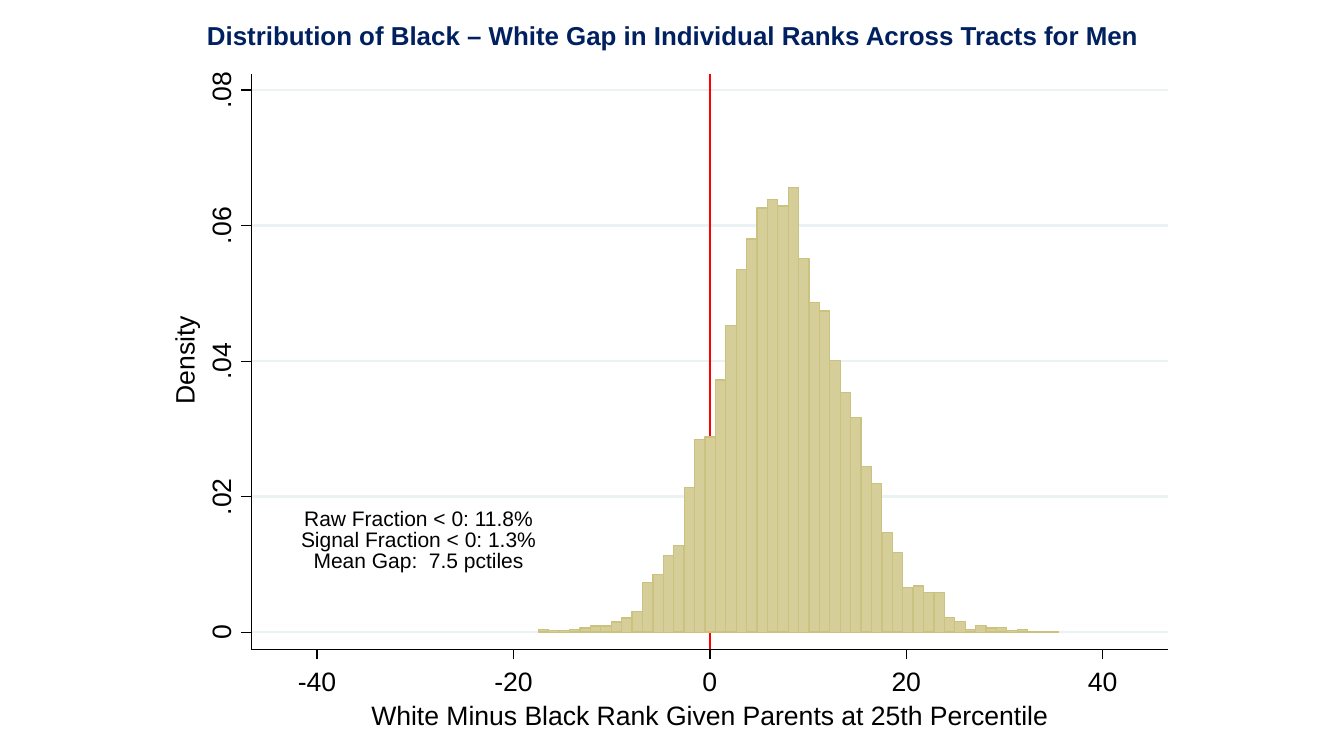
from lxml import etree
from pptx import Presentation
from pptx.dml.color import RGBColor
from pptx.enum.shapes import MSO_CONNECTOR, MSO_SHAPE
from pptx.enum.text import MSO_ANCHOR, MSO_AUTO_SIZE, PP_ALIGN
from pptx.oxml.ns import qn
from pptx.util import Cm, Pt

RECT = MSO_SHAPE.RECTANGLE
STRAIGHT = MSO_CONNECTOR.STRAIGHT
CENTER = PP_ALIGN.CENTER
MIDDLE = MSO_ANCHOR.MIDDLE
FIXED = MSO_AUTO_SIZE.NONE

FONT = "Arial"
COLORS = {
    "title": "002060",
    "text": "000000",
    "axis": "000000",
    "grid": "EAF2F3",
    "zero": "FF0000",
    "bar": "D5CE98",
    "edge": "CAC27E",
}

# Plot frame in cm
LEFT, RIGHT, TOP, BOTTOM = 6.33, 29.44, 1.86, 16.36
ORIGIN_X, ORIGIN_Y = 17.89, 15.93
TICK = 0.25
THIN, THICK = 0.88, 1.75

# Histogram: bin edges in ranks, densities in ten-thousandths
FIRST, BIN = -17.46, 1.06
DENSITY = [
    4, 3, 3, 4, 6, 9, 9, 15, 21, 30,
    73, 85, 113, 128, 213, 284, 288, 372, 452, 535,
    580, 626, 638, 629, 656, 552, 486, 474, 401, 354,
    317, 244, 219, 147, 117, 66, 68, 58, 59, 22,
    16, 4, 10, 6, 7, 3, 4, 1, 1, 1,
]
RANKS = range(-40, 41, 20)
LEVELS = {0: "0", 200: ".02", 400: ".04", 600: ".06", 800: ".08"}
NOTES = [
    "Raw Fraction < 0: 11.8%",
    "Signal Fraction < 0: 1.3%",
    "Mean Gap:  7.5 pctiles",
]


def map_x(rank):
    return ORIGIN_X + rank * 9.9 / 40


def map_y(level):
    return ORIGIN_Y - level * 13.66 / 800


def color(name):
    return RGBColor.from_string(COLORS[name])


def style(para, size, name, bold=False):
    para.alignment = CENTER
    for run in para.runs:
        font = run.font
        font.name, font.size, font.bold = FONT, Pt(size), bold
        font.color.rgb = color(name)


def add_line(slide, x1, y1, x2, y2, name, width):
    line = slide.shapes.add_connector(STRAIGHT, Cm(x1), Cm(y1), Cm(x2), Cm(y2))
    line.line.color.rgb = color(name)
    line.line.width = Pt(width)
    etree.SubElement(line._element.spPr, qn("a:effectLst"))


def add_bar(slide, index, level):
    left, top = map_x(FIRST + index * BIN), map_y(level)
    bar = slide.shapes.add_shape(
        RECT, Cm(left), Cm(top), Cm(map_x(BIN) - ORIGIN_X), Cm(ORIGIN_Y - top))
    bar.shadow.inherit = False
    bar.fill.solid()
    bar.fill.fore_color.rgb = color("bar")
    bar.line.color.rgb = color("edge")
    bar.line.width = Pt(THIN)


def add_label(slide, text, x, y, width, size=19, turn=0):
    """Place one line of text with its middle at x, y."""
    high = 0.89 if size == 19 else 0.71
    box = slide.shapes.add_textbox(
        Cm(x - width / 2), Cm(y - high / 2), Cm(width), Cm(high))
    box.rotation = turn
    frame = box.text_frame
    frame.margin_left = frame.margin_right = 0
    frame.margin_top = frame.margin_bottom = 0
    frame.word_wrap = False
    frame.vertical_anchor = MIDDLE
    frame.text = text
    style(frame.paragraphs[0], size, "text")


def add_title(slide, text):
    title = slide.shapes.title
    title.left, title.top = Cm(4.24), Cm(0.25)
    title.width, title.height = Cm(25.4), Cm(1.27)
    frame = title.text_frame
    frame.text = text
    frame.word_wrap = True
    frame.auto_size = FIXED
    frame.vertical_anchor = MIDDLE
    style(frame.paragraphs[0], 18.5, "title", True)


def add_plot(slide):
    for level in LEVELS:
        y = map_y(level)
        add_line(slide, LEFT, y, RIGHT, y, "grid", THICK)
    add_line(slide, ORIGIN_X, BOTTOM, ORIGIN_X, TOP, "zero", THICK)
    for index, level in enumerate(DENSITY):
        add_bar(slide, index, level)


def add_axes(slide):
    add_line(slide, LEFT, BOTTOM, LEFT, TOP, "axis", THIN)
    for level, text in LEVELS.items():
        y = map_y(level)
        add_line(slide, LEFT, y, LEFT - TICK, y, "axis", THIN)
        add_label(slide, text, 5.56, y, 1.22, turn=270)
    add_label(slide, "Density", 4.64, 9.08, 2.51, turn=270)

    add_line(slide, LEFT, BOTTOM, RIGHT, BOTTOM, "axis", THIN)
    for rank in RANKS:
        x = map_x(rank)
        add_line(slide, x, BOTTOM, x, BOTTOM + TICK, "axis", THIN)
        add_label(slide, str(rank), x, 17.15, 1.24)
    add_label(slide, "White Minus Black Rank Given Parents at 25th Percentile",
              ORIGIN_X, 18.02, 17.8)


def main():
    deck = Presentation()
    deck.slide_width, deck.slide_height = Cm(33.87), Cm(19.05)
    slide = deck.slides.add_slide(deck.slide_layouts[5])
    add_title(slide, "Distribution of Black – White Gap in Individual Ranks "
                     "Across Tracts for Men")
    add_plot(slide)
    for row, text in enumerate(NOTES):
        add_label(slide, text, 10.55, 13.05 + row * 0.53, 6.4, size=15)
    add_axes(slide)
    deck.save("out.pptx")


if __name__ == "__main__":
    main()
